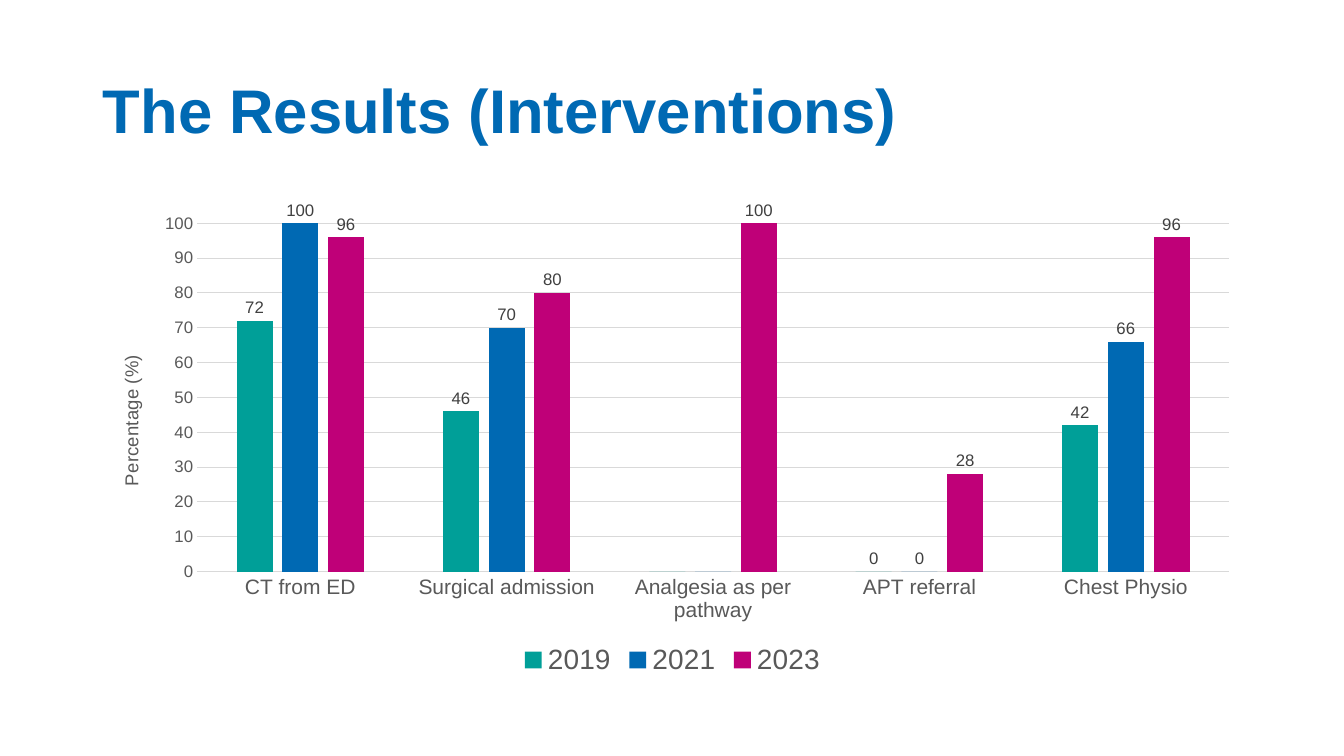
"""Build a slide with a clustered column chart of intervention results."""
from dataclasses import dataclass

from lxml.etree import SubElement
from pptx import Presentation
from pptx.chart.data import CategoryChartData
from pptx.dml.color import RGBColor
from pptx.enum.chart import XL_CHART_TYPE, XL_LABEL_POSITION, XL_LEGEND_POSITION, XL_TICK_MARK
from pptx.enum.text import MSO_ANCHOR
from pptx.oxml.ns import qn
from pptx.util import Pt

PIXEL = 9144


@dataclass(frozen=True)
class Theme:
    """Font, colours and type sizes of the slide."""
    font: str = "Arial"
    blue: str = "0069B3"
    teal: str = "009F98"
    magenta: str = "BF0078"
    grey: str = "595959"
    dark: str = "404040"
    grid: str = "D9D9D9"
    title_size: float = 44
    legend_size: float = 20
    category_size: float = 15
    axis_title_size: float = 13.3
    value_size: float = 12
    hairline: float = 0.75


class SlideBuilder:
    """Adds styled elements to the current slide."""

    def __init__(self, slide, theme):
        self.slide = slide
        self.theme = theme

    def place(self, shape, left, top, width, height):
        shape.left, shape.top = left * PIXEL, top * PIXEL
        shape.width, shape.height = width * PIXEL, height * PIXEL

    def style(self, font, size, color, bold=False):
        font.name = self.theme.font
        font.size = Pt(size)
        font.bold = bold
        font.color.rgb = RGBColor.from_string(color)

    def hairline(self, line):
        line.width = Pt(self.theme.hairline)
        line.color.rgb = RGBColor.from_string(self.theme.grid)

    def title(self, text, *bounds):
        box = self.slide.shapes.title
        self.place(box, *bounds)
        frame = box.text_frame
        frame.text = text
        frame.vertical_anchor = MSO_ANCHOR.MIDDLE
        para = frame.paragraphs[0]
        para.alignment = 1
        para.line_spacing = 0.9
        self.style(para.runs[0].font, self.theme.title_size, self.theme.blue, bold=True)

    def layout(self, parent, **settings):
        layout = parent.find(qn("c:layout"))
        if layout is None:
            layout = SubElement(parent, qn("c:layout"))
            parent.insert(0, layout)
        manual = SubElement(layout, qn("c:manualLayout"))
        for name, value in settings.items():
            SubElement(manual, qn(f"c:{name}")).set("val", str(value))

    def axis(self, axis, size):
        axis.major_tick_mark = axis.minor_tick_mark = XL_TICK_MARK.NONE
        self.style(axis.tick_labels.font, size, self.theme.grey)

    def axis_title(self, axis, text):
        title = axis.axis_title
        title.text_frame.text = text
        run = title.text_frame.paragraphs[0].runs[0]
        self.style(run.font, self.theme.axis_title_size, self.theme.grey)
        body = title._element.find(".//" + qn("a:bodyPr"))
        body.set("rot", "-5400000")
        body.set("vert", "horz")
        self.layout(title._element, xMode="edge", yMode="edge", x=0.02, y=0.31)

    def series(self, series, color, hidden_labels):
        series.format.fill.solid()
        series.format.fill.fore_color.rgb = RGBColor.from_string(color)
        series.invert_if_negative = False
        labels = series.data_labels
        labels.show_value = True
        labels.position = XL_LABEL_POSITION.OUTSIDE_END
        self.style(labels.font, self.theme.value_size, self.theme.dark)
        for position, index in enumerate(hidden_labels):
            label = SubElement(labels._element, qn("c:dLbl"))
            SubElement(label, qn("c:idx")).set("val", str(index))
            SubElement(label, qn("c:delete")).set("val", "1")
            labels._element.insert(position, label)

    def column_chart(self, categories, rows, value_title, *bounds):
        data = CategoryChartData()
        data.categories = categories
        for name, values, _, _ in rows:
            data.add_series(name, values)
        left, top, width, height = (length * PIXEL for length in bounds)
        chart = self.slide.shapes.add_chart(
            XL_CHART_TYPE.COLUMN_CLUSTERED, left, top, width, height, data).chart
        chart.has_title = False
        chart.font.name = self.theme.font
        plot = chart.plots[0]
        plot.gap_width, plot.overlap = 219, -27
        plot.vary_by_categories = False
        for series, (_, _, color, hidden_labels) in zip(plot.series, rows):
            self.series(series, color, hidden_labels)

        self.axis(chart.category_axis, self.theme.category_size)
        self.hairline(chart.category_axis.format.line)
        value_axis = chart.value_axis
        self.axis(value_axis, self.theme.value_size)
        value_axis.minimum_scale, value_axis.maximum_scale = 0, 100
        value_axis.major_unit = 10
        value_axis.format.line.fill.background()
        self.hairline(value_axis.major_gridlines.format.line)
        self.axis_title(value_axis, value_title)

        chart.has_legend = True
        chart.legend.position = XL_LEGEND_POSITION.BOTTOM
        chart.legend.include_in_layout = False
        self.style(chart.legend.font, self.theme.legend_size, self.theme.grey)
        self.layout(chart._chartSpace.find(".//" + qn("c:plotArea")),
                    layoutTarget="inner", xMode="edge", yMode="edge",
                    x=0.09, y=0.04, w=0.89, h=0.73)


def main():
    deck = Presentation()
    deck.slide_width, deck.slide_height = 1333 * PIXEL, 750 * PIXEL
    theme = Theme()
    page = SlideBuilder(deck.slides.add_slide(deck.slide_layouts[5]), theme)
    page.title("The Results (Interventions)", 92, 40, 1150, 145)
    categories = ["CT from ED", "Surgical admission", "Analgesia as per pathway",
                  "APT referral", "Chest Physio"]
    rows = [
        ("2019", (72, 46, 0, 0, 42), theme.teal, [2]),
        ("2021", (100, 70, 0, 0, 66), theme.blue, [2]),
        ("2023", (96, 80, 100, 28, 96), theme.magenta, []),
    ]
    page.column_chart(categories, rows, "Percentage (%)", 92, 200, 1150, 476)
    deck.save("out.pptx")


if __name__ == "__main__":
    main()
